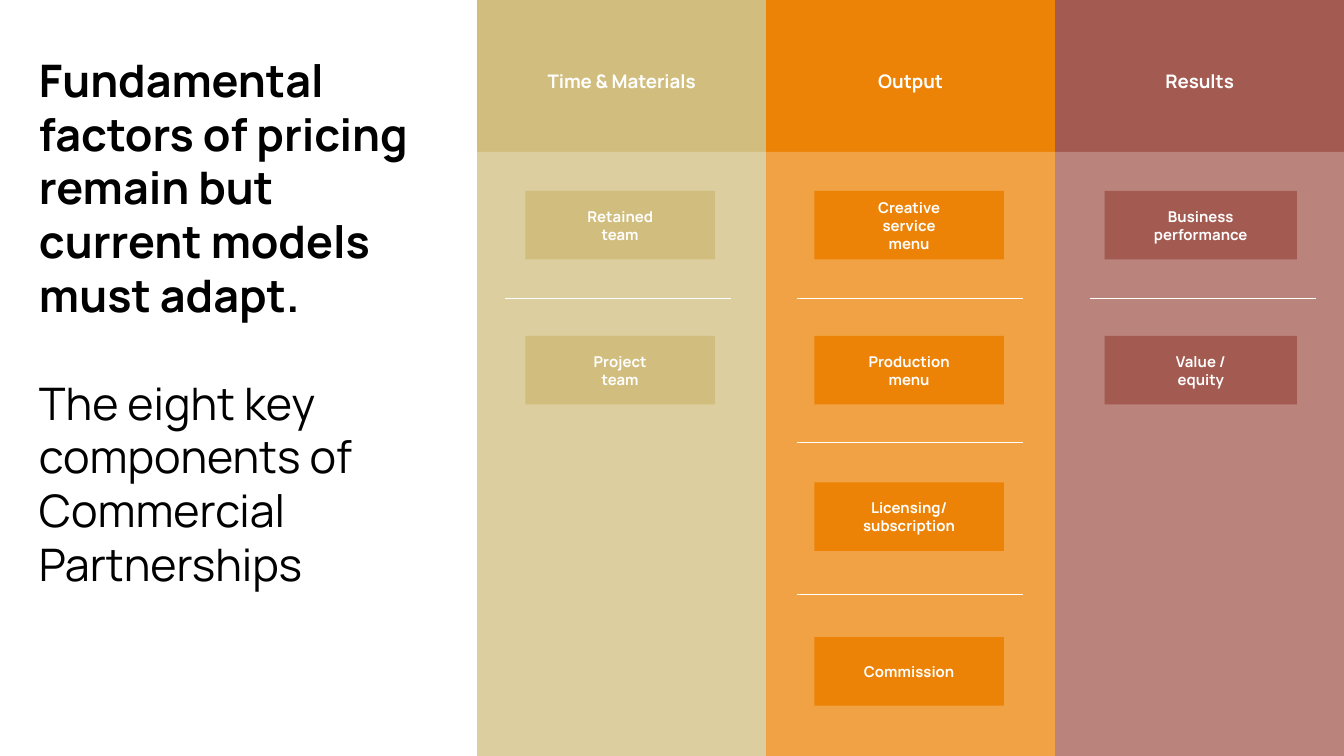
"""Build a slide that sets three pricing models beside a headline."""

from dataclasses import dataclass

from lxml.etree import SubElement
from pptx import Presentation
from pptx.dml.color import RGBColor
from pptx.enum.shapes import MSO_CONNECTOR as Connector, MSO_SHAPE as Shape
from pptx.enum.text import MSO_ANCHOR as Anchor, MSO_AUTO_SIZE as AutoSize, PP_ALIGN as Align
from pptx.oxml.ns import qn
from pptx.util import Inches, Pt

FONT = "Manrope"
WHITE = "FFFFFF"
SLIDE_WIDTH = 10
SLIDE_HEIGHT = SLIDE_WIDTH * 9 / 16
COLUMNS_LEFT, COLUMN_WIDTH = 3.55, 2.15
HEADER_HEIGHT = 1.13
BOX_TOPS = (1.42, 2.5, 3.59, 4.74)
BOX_HEIGHT = 0.51
DIVIDER_TOPS = (2.22, 3.29, 4.42)
DIVIDER_WIDTH = 1.68


@dataclass(frozen=True)
class Model:
    name: str
    color: str
    box_left: float
    box_width: float
    divider_left: float
    items: tuple[str, ...]


MODELS = (
    Model("Time & Materials", "D1BE7E", 3.91, 1.41, 3.76, ("Retained\nteam", "Project\nteam")),
    Model("Output", "EC8306", 6.06, 1.41, 5.93,
          ("Creative\nservice\nmenu", "Production\nmenu", "Licensing/\nsubscription", "Commission")),
    Model("Results", "A35A51", 8.22, 1.43, 8.11, ("Business\nperformance", "Value /\nequity")),
)


def rgb(color: str) -> RGBColor:
    return RGBColor.from_string(color)


def place(shape, left: float, top: float, width: float, height: float) -> None:
    shape.left, shape.top = Inches(left), Inches(top)
    shape.width, shape.height = Inches(width), Inches(height)


def write(para, text: str, *, size: float, color: str = WHITE, bold: bool = True,
          align=Align.CENTER, before: float = 0) -> None:
    para.alignment = align
    para.space_before = Pt(before)
    span = para.add_run()
    span.text = text
    span.font.name = FONT
    span.font.size = Pt(size)
    span.font.bold = bold
    span.font.color.rgb = rgb(color)


def add_rectangle(page, left: float, top: float, width: float, height: float, color: str):
    box = page.shapes.add_shape(
        Shape.RECTANGLE, Inches(left), Inches(top), Inches(width), Inches(height))
    box.shadow.inherit = False
    box.fill.solid()
    box.fill.fore_color.rgb = rgb(color)
    box.line.fill.background()
    return box


def add_veil(page) -> None:
    veil = add_rectangle(page, COLUMNS_LEFT, HEADER_HEIGHT, SLIDE_WIDTH - COLUMNS_LEFT,
                         SLIDE_HEIGHT - HEADER_HEIGHT, WHITE)
    tint = veil._element.spPr.find(qn("a:solidFill"))[0]
    SubElement(tint, qn("a:alpha"), val="25000")


def add_header(page, text: str, left: float) -> None:
    box = page.shapes.add_textbox(
        Inches(left), Inches(0.47), Inches(COLUMN_WIDTH), Inches(0.27))
    box.text_frame.word_wrap = True
    box.text_frame.auto_size = AutoSize.SHAPE_TO_FIT_TEXT
    write(box.text_frame.paragraphs[0], text, size=10)


def add_item(page, model: Model, text: str, top: float) -> None:
    box = add_rectangle(page, model.box_left, top, model.box_width, BOX_HEIGHT, model.color)
    frame = box.text_frame
    frame.word_wrap = True
    frame.vertical_anchor = Anchor.MIDDLE
    for index, line in enumerate(text.split("\n")):
        para = frame.add_paragraph() if index else frame.paragraphs[0]
        write(para, line, size=8)


def add_divider(page, left: float, top: float) -> None:
    divider = page.shapes.add_connector(
        Connector.STRAIGHT, Inches(left), Inches(top), Inches(left + DIVIDER_WIDTH), Inches(top))
    divider.line.color.rgb = rgb(WHITE)
    divider.line.width = Pt(0.5)
    SubElement(divider._element.spPr, qn("a:effectLst"))


def fill_title(title) -> None:
    place(title, 0.19, 0.34, 2.99, 4.54)
    frame = title.text_frame
    frame.word_wrap = True
    frame.auto_size = AutoSize.SHAPE_TO_FIT_TEXT
    frame.vertical_anchor = Anchor.TOP
    write(frame.paragraphs[0],
          "Fundamental factors of pricing remain but current models must adapt.",
          size=24, color="000000", align=Align.LEFT)
    write(frame.add_paragraph(), "The eight key components of Commercial Partnerships",
          size=24, color="000000", bold=False, align=Align.LEFT, before=29)


def main() -> None:
    deck = Presentation()
    deck.slide_width, deck.slide_height = Inches(SLIDE_WIDTH), Inches(SLIDE_HEIGHT)
    page = deck.slides.add_slide(deck.slide_layouts[5])
    fill_title(page.shapes.title)

    lefts = [COLUMNS_LEFT + index * COLUMN_WIDTH for index in range(len(MODELS))]
    for model, left in zip(MODELS, lefts):
        add_rectangle(page, left, 0, COLUMN_WIDTH, SLIDE_HEIGHT, model.color)
    add_veil(page)

    for model, left in zip(MODELS, lefts):
        add_header(page, model.name, left)
        for text, top in zip(model.items, BOX_TOPS):
            add_item(page, model, text, top)
        for top in DIVIDER_TOPS[:len(model.items) - 1]:
            add_divider(page, model.divider_left, top)

    deck.save("out.pptx")


if __name__ == "__main__":
    main()
